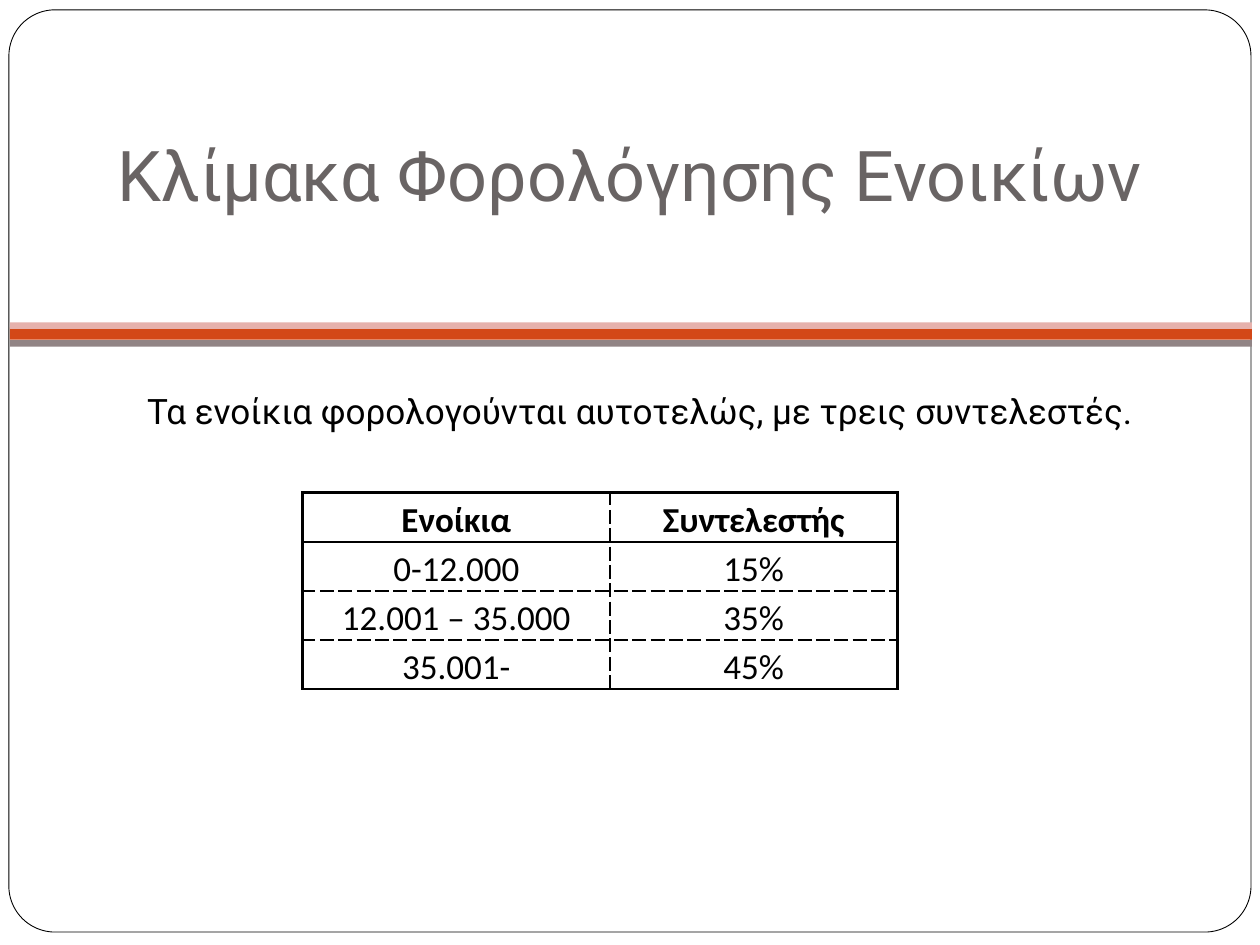
from lxml.etree import SubElement
from pptx import Presentation
from pptx.dml.color import RGBColor
from pptx.enum.shapes import MSO_SHAPE
from pptx.enum.text import MSO_ANCHOR, PP_ALIGN
from pptx.oxml.ns import qn
from pptx.util import Cm, Pt

BLACK = RGBColor(0x00, 0x00, 0x00)
WHITE = RGBColor(0xFF, 0xFF, 0xFF)
TITLE_GREY = RGBColor(0x69, 0x64, 0x64)
ORANGE = RGBColor(0xD3, 0x48, 0x17)
PINK = RGBColor(0xE6, 0xB1, 0xAC)
GREY = RGBColor(0x91, 0x84, 0x85)

RATES = [
    ("Ενοίκια", "Συντελεστής"),
    ("0-12.000", "15%"),
    ("12.001 – 35.000", "35%"),
    ("35.001-", "45%"),
]
COLUMN_WIDTHS = (Cm(6.2), Cm(5.79))
ROW_HEIGHT = Cm(0.99)


def add_panel(slide, preset, left, top, width, height, color):
    shape = slide.shapes.add_shape(preset, left, top, width, height)
    shape.shadow.inherit = False
    shape.fill.solid()
    shape.fill.fore_color.rgb = color
    shape.line.fill.background()
    return shape


def add_frame(slide):
    frame = add_panel(slide, MSO_SHAPE.ROUNDED_RECTANGLE,
                      Cm(0.18), Cm(0.2), Cm(25.04), Cm(18.59), WHITE)
    frame.adjustments[0] = 0.05
    frame.line.color.rgb = BLACK
    frame.line.width = Pt(0.5)


def add_divider(slide):
    stripes = [(6.6, 0.25, ORANGE), (6.5, 0.13, PINK), (6.86, 0.13, GREY)]
    for top, height, color in stripes:
        add_panel(slide, MSO_SHAPE.RECTANGLE,
                  Cm(0.2), Cm(top), Cm(25.04), Cm(height), color)


def write_centered(paragraph, text, font_name, size, color, bold=False):
    paragraph.alignment = PP_ALIGN.CENTER
    run = paragraph.add_run()
    run.text = text
    run.font.name = font_name
    run.font.size = Pt(size)
    run.font.color.rgb = color
    run.font.bold = bold


def add_text(slide, left, top, width, height, text, size, color):
    text_frame = slide.shapes.add_textbox(left, top, width, height).text_frame
    text_frame.word_wrap = True
    write_centered(text_frame.paragraphs[0], text, "Roboto", size, color)
    return text_frame


def set_borders(cell, solid_sides):
    """Draw the given sides solid and the others thin and dashed."""
    properties = cell._tc.get_or_add_tcPr()
    for side in "LRTB":
        solid = side in solid_sides
        line = SubElement(properties, qn(f"a:ln{side}"),
                          w=str(Pt(1.5) if solid else Pt(1)))
        fill = SubElement(line, qn("a:solidFill"))
        SubElement(fill, qn("a:srgbClr"), val=str(BLACK))
        SubElement(line, qn("a:prstDash"), val="solid" if solid else "dash")


def fill_cell(cell, text, is_header):
    cell.fill.background()
    cell.margin_left = cell.margin_right = Cm(0.18)
    cell.margin_top = cell.margin_bottom = 0
    cell.vertical_anchor = MSO_ANCHOR.TOP if is_header else MSO_ANCHOR.MIDDLE
    paragraph = cell.text_frame.paragraphs[0]
    paragraph.line_spacing = 1.15
    paragraph.space_after = Pt(10)
    write_centered(paragraph, text, "Calibri", 20, BLACK, is_header)


def add_rate_table(slide):
    table = slide.shapes.add_table(
        len(RATES), len(COLUMN_WIDTHS), Cm(6.1), Cm(9.93),
        sum(COLUMN_WIDTHS), ROW_HEIGHT * len(RATES)).table
    table.first_row = table.horz_banding = False
    for column, width in zip(table.columns, COLUMN_WIDTHS):
        column.width = width
    for row_index, values in enumerate(RATES):
        table.rows[row_index].height = ROW_HEIGHT
        for column_index, text in enumerate(values):
            cell = table.cell(row_index, column_index)
            solid_sides = "L" if column_index == 0 else "R"
            if row_index <= 1:
                solid_sides += "T"
            if row_index in (0, len(RATES) - 1):
                solid_sides += "B"
            set_borders(cell, solid_sides)
            fill_cell(cell, text, row_index == 0)


def main():
    presentation = Presentation()
    presentation.slide_width = Cm(25.4)
    presentation.slide_height = Cm(19.05)
    slide = presentation.slides.add_slide(presentation.slide_layouts[6])
    add_frame(slide)
    add_divider(slide)
    title = add_text(slide, Cm(1.9), Cm(1.52), Cm(21.59), Cm(3.07),
                     "Κλίμακα Φορολόγησης Ενοικίων", 40, TITLE_GREY)
    title.vertical_anchor = MSO_ANCHOR.BOTTOM
    title.margin_bottom = Cm(0.25)
    add_rate_table(slide)
    add_text(slide, Cm(1.5), Cm(7.72), Cm(22.81), Cm(1.12),
             "Τα ενοίκια φορολογούνται αυτοτελώς, με τρεις συντελεστές.",
             20, BLACK)
    presentation.save("out.pptx")


if __name__ == "__main__":
    main()
